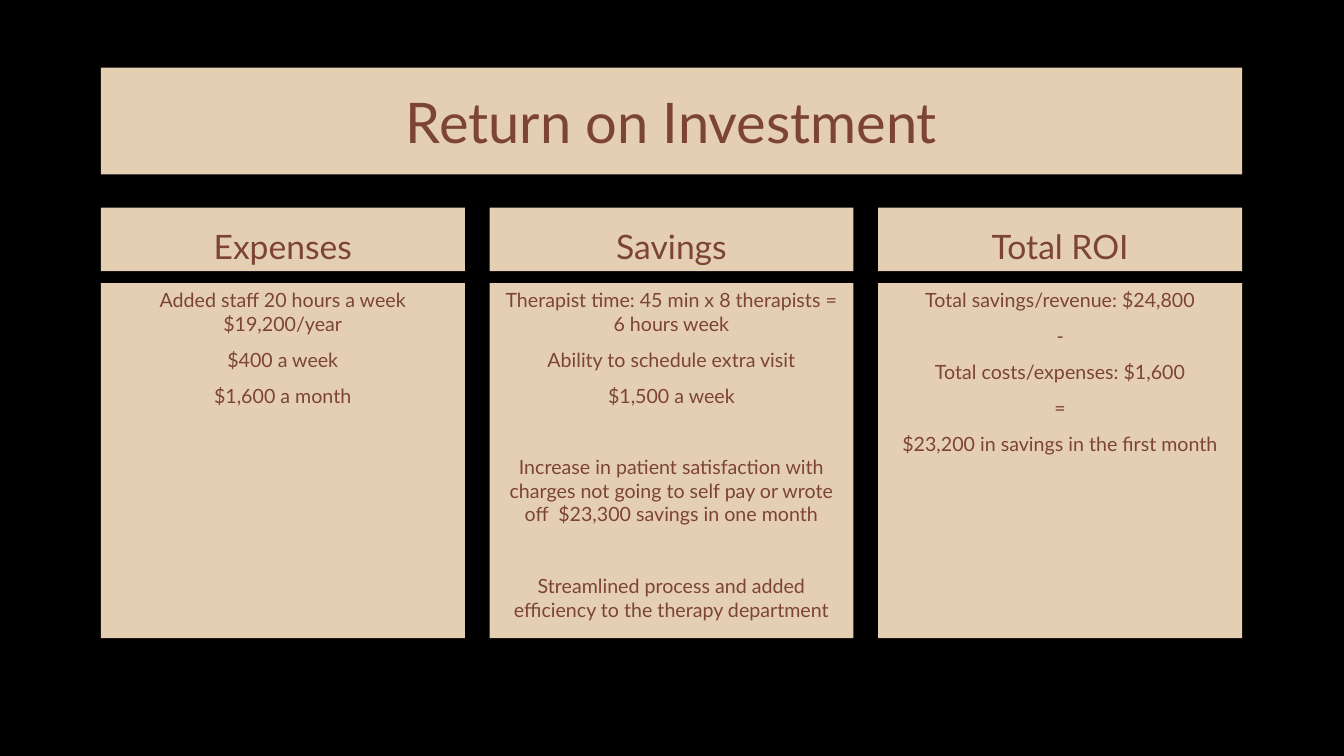
from pptx import Presentation
from pptx.dml.color import RGBColor
from pptx.enum.text import MSO_ANCHOR, MSO_AUTO_SIZE, PP_ALIGN
from pptx.oxml.xmlchemy import OxmlElement
from pptx.util import Inches, Pt

BLACK = RGBColor(0x00, 0x00, 0x00)
SAND = RGBColor(0xE5, 0xCF, 0xB2)
BROWN = RGBColor(0x7C, 0x44, 0x32)
FONT = "Lato"

LEFT, FULL_WIDTH, COLUMN_WIDTH = 1, 11.32, 3.61
HEADING_SIZE, ITEM_SIZE = 24, 14
COMPARISON_LAYOUT = 4

# Each column holds a heading and groups of items; a wider gap parts the groups.
COLUMNS = [
    ("Expenses", [
        ["Added staff 20 hours a week $19,200/year", "$400 a week", "$1,600 a month"],
    ]),
    ("Savings", [
        ["Therapist time: 45 min x 8 therapists = 6 hours week",
         "Ability to schedule extra visit", "$1,500 a week"],
        ["Increase in patient satisfaction with charges not going to self pay "
         "or wrote off  $23,300 savings in one month"],
        ["Streamlined process and added efficiency to the therapy department"],
    ]),
    ("Total ROI", [
        ["Total savings/revenue: $24,800", "-", "Total costs/expenses: $1,600", "=",
         "$23,200 in savings in the first month"],
    ]),
]


def format_panel(box, left, top, width, height, anchor):
    box.left, box.top = Inches(left), Inches(top)
    box.width, box.height = Inches(width), Inches(height)
    box.fill.solid()
    box.fill.fore_color.rgb = SAND
    frame = box.text_frame
    frame.word_wrap = True
    frame.auto_size = MSO_AUTO_SIZE.NONE
    frame.vertical_anchor = anchor


def write_paragraph(para, text, size, before=0, after=0):
    para.text = text
    para.alignment = PP_ALIGN.CENTER
    para.line_spacing = 1.0
    para.space_before, para.space_after = Pt(before), Pt(after)
    para.font.name, para.font.size = FONT, Pt(size)
    para.font.bold = False
    para.font.color.rgb = BROWN
    properties = para._p.get_or_add_pPr()
    properties.set("marL", "0")
    properties.set("indent", "0")
    properties.insert_element_before(
        OxmlElement("a:buNone"), "a:tabLst", "a:defRPr", "a:extLst")


def write_groups(frame, groups, size):
    """Fill the frame, leaving one line's room before each later group."""
    usual_gap, after = 0.2 * size, 6
    group_gap = 2 * usual_gap + 1.2 * size + after
    para = frame.paragraphs[0]
    for group_number, group in enumerate(groups):
        for item_number, text in enumerate(group):
            if group_number or item_number:
                para = frame.add_paragraph()
            starts_later_group = group_number and not item_number
            write_paragraph(para, text, size,
                            group_gap if starts_later_group else usual_gap, after)


def main():
    deck = Presentation()
    deck.slide_width, deck.slide_height = Inches(13.33), Inches(7.5)
    page = deck.slides.add_slide(deck.slide_layouts[COMPARISON_LAYOUT])
    page.background.fill.solid()
    page.background.fill.fore_color.rgb = BLACK

    title = page.shapes.title
    format_panel(title, LEFT, 0.67, FULL_WIDTH, 1.06, MSO_ANCHOR.MIDDLE)
    write_paragraph(title.text_frame.paragraphs[0], "Return on Investment", 40)

    # The layout has body placeholders for two columns; text boxes make the third.
    panels = [box for box in page.placeholders if box.placeholder_format.idx in range(1, 5)]
    while len(panels) < 2 * len(COLUMNS):
        panels.append(page.shapes.add_textbox(0, 0, Inches(1), Inches(1)))

    pitch = (FULL_WIDTH - COLUMN_WIDTH) / (len(COLUMNS) - 1)
    for number, (heading, groups) in enumerate(COLUMNS):
        left = LEFT + number * pitch
        heading_box, items_box = panels[2 * number:2 * number + 2]
        format_panel(heading_box, left, 2.06, COLUMN_WIDTH, 0.63, MSO_ANCHOR.BOTTOM)
        write_groups(heading_box.text_frame, [[heading]], HEADING_SIZE)
        format_panel(items_box, left, 2.81, COLUMN_WIDTH, 3.52, MSO_ANCHOR.TOP)
        write_groups(items_box.text_frame, groups, ITEM_SIZE)

    deck.save("out.pptx")


if __name__ == "__main__":
    main()
